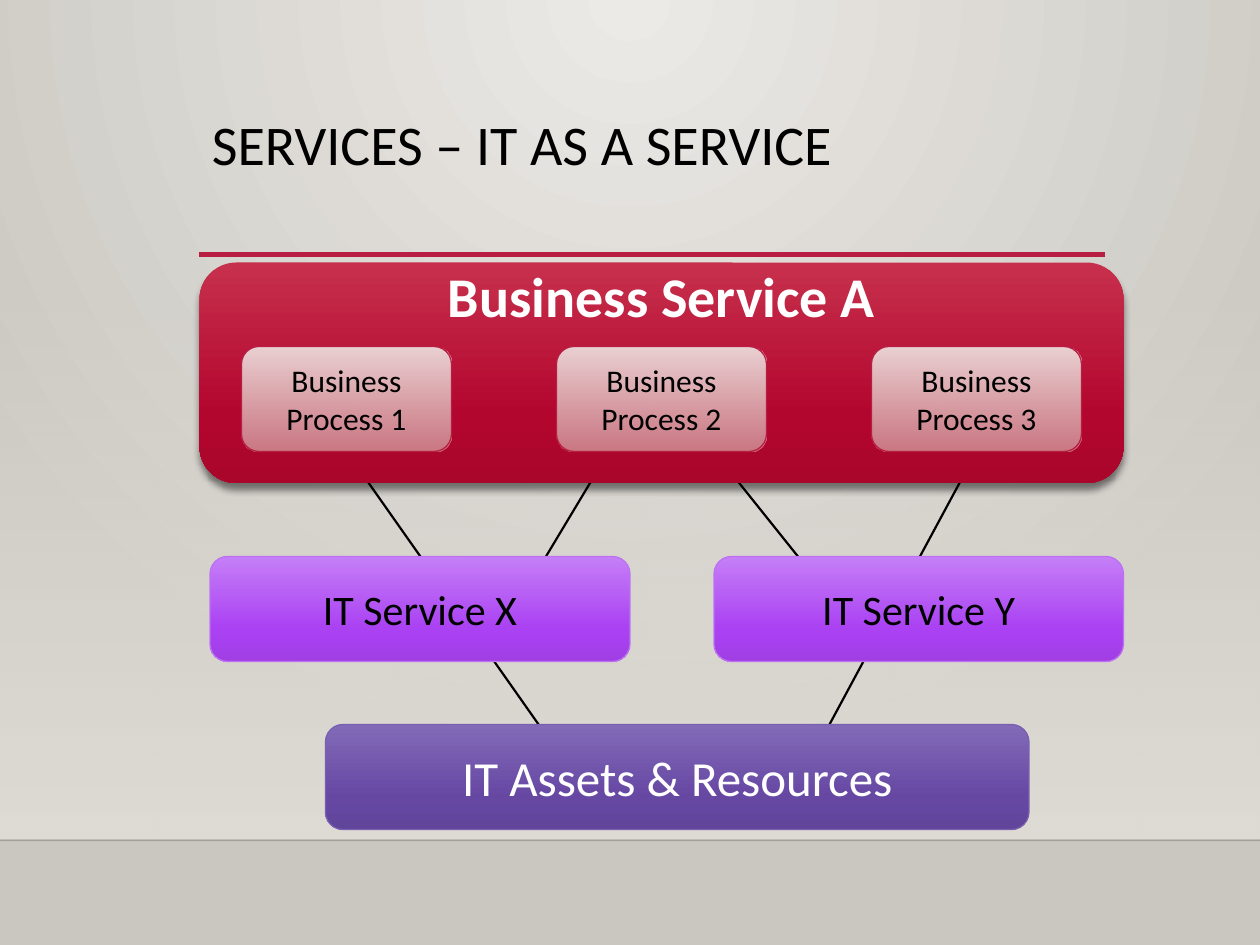
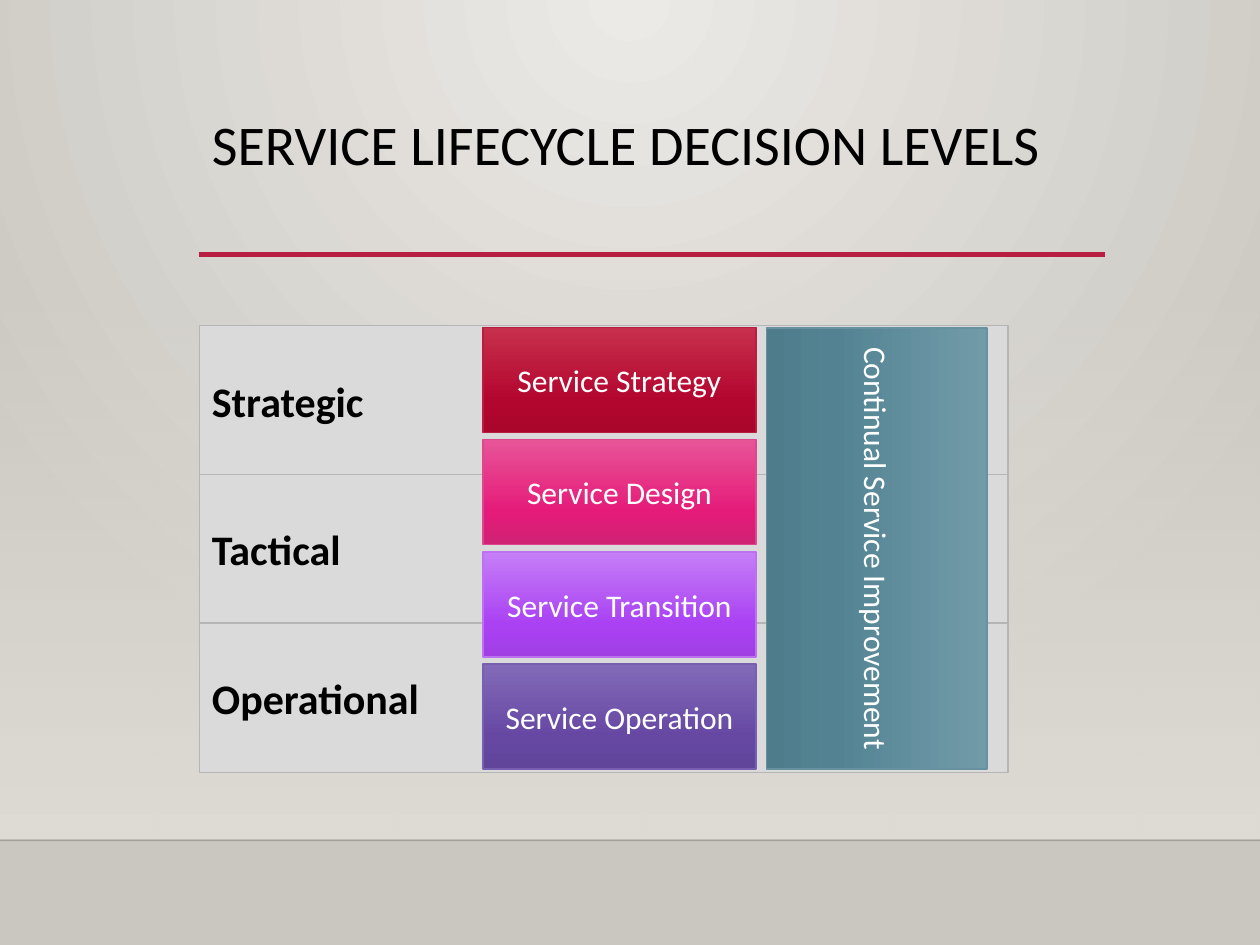
"""Build two slides on IT services and the service lifecycle."""
from lxml.etree import SubElement
from pptx import Presentation
from pptx.dml.color import RGBColor
from pptx.enum.shapes import MSO_CONNECTOR, MSO_SHAPE
from pptx.enum.text import MSO_ANCHOR, PP_ALIGN
from pptx.oxml.ns import qn
from pptx.util import Pt

BLACK = RGBColor(0x00, 0x00, 0x00)
WHITE = RGBColor(0xFF, 0xFF, 0xFF)
RED = RGBColor(0xB7, 0x1E, 0x42)
PINK = RGBColor(0xDE, 0x47, 0x8E)
PURPLE = RGBColor(0xBC, 0x72, 0xF0)
VIOLET = RGBColor(0x79, 0x5F, 0xAF)
TEAL = RGBColor(0x68, 0x92, 0xA0)
GREY = RGBColor(0xDA, 0xDA, 0xDA)
GREY_EDGE = RGBColor(0xB5, 0xB5, 0xB5)
SAND = RGBColor(0xDF, 0xDB, 0xD5)

BACKDROP = [(0, RGBColor(0xEC, 0xEA, 0xE7), 100), (100, RGBColor(0xCA, 0xC7, 0xC1), 100)]
FADE = [(0, SAND, 0), (100, SAND, 100)]
ROSE_FILL = [(0, RGBColor(0xEA, 0xD1, 0xD3), 100), (100, RGBColor(0xCD, 0x82, 0x8A), 92)]


def glossy(top, body, bottom):
    """Return the stops of a three-tone gradient."""
    return [(0, top, 100), (69, body, 100), (100, bottom, 100)]


RED_FILL = glossy(RGBColor(0xC7, 0x30, 0x4C), RGBColor(0xB3, 0x06, 0x2F), RGBColor(0xAA, 0x06, 0x2C))
PINK_FILL = glossy(RGBColor(0xE7, 0x55, 0x97), RGBColor(0xE5, 0x1A, 0x79), RGBColor(0xCF, 0x23, 0x74))
PURPLE_FILL = glossy(RGBColor(0xC5, 0x7F, 0xF7), RGBColor(0xAA, 0x41, 0xF3), RGBColor(0xA1, 0x3F, 0xE5))
VIOLET_FILL = glossy(RGBColor(0x83, 0x6A, 0xB8), RGBColor(0x66, 0x48, 0xA3), RGBColor(0x60, 0x45, 0x9A))
TEAL_FILL = glossy(RGBColor(0x72, 0x9B, 0xA9), RGBColor(0x53, 0x83, 0x93), RGBColor(0x4F, 0x7C, 0x8B))


def add_color(parent, color, alpha):
    """Add an RGB colour with its opacity in percent."""
    clr = SubElement(parent, qn("a:srgbClr"), val=str(color))
    if alpha < 100:
        SubElement(clr, qn("a:alpha"), val=str(alpha * 1000))


def set_gradient(parent, stops, radial=False):
    """Replace the solid fill of parent by a gradient."""
    grad = parent.makeelement(qn("a:gradFill"), {"rotWithShape": "1"})
    parent.replace(parent.find(qn("a:solidFill")), grad)
    gs_lst = SubElement(grad, qn("a:gsLst"))
    for pos, color, alpha in stops:
        add_color(SubElement(gs_lst, qn("a:gs"), pos=str(pos * 1000)), color, alpha)
    if radial:
        shade = SubElement(grad, qn("a:path"), {"path": "circle"})
        SubElement(shade, qn("a:fillToRect"), l="43000", t="0", r="43000", b="100000")
    else:
        SubElement(grad, qn("a:lin"), ang="5400000", scaled="0")


class Deck:
    """Hold the style and the current slide."""

    font = "Calibri"

    def __init__(self):
        """Start an empty presentation."""
        self.prs = Presentation()
        self.prs.slide_width, self.prs.slide_height = Pt(720), Pt(540)

    def slide(self, title):
        """Add a slide with backdrop, rules and title."""
        self.s = self.prs.slides.add_slide(self.prs.slide_layouts[6])
        self.s.background.fill.solid()
        set_gradient(self.s.element.find(".//" + qn("p:bgPr")), BACKDROP, radial=True)
        self.box(0, 158.4, 720, 321.5, FADE)
        self.line(0, 480.2, 720, 480.2, BLACK, 1, alpha=20)
        self.line(114, 145.4, 631.4, 145.4, RED, 2.5)
        tb = self.s.shapes.add_textbox(Pt(114), Pt(63.4), Pt(517.7), Pt(82.8))
        self.label(tb, title, 32, BLACK, align=PP_ALIGN.LEFT, anchor=MSO_ANCHOR.TOP, spacing=0.9)

    def label(self, sp, text, size, color, bold=False, align=PP_ALIGN.CENTER,
              anchor=MSO_ANCHOR.MIDDLE, spacing=None):
        """Put one formatted paragraph in a shape."""
        tf = sp.text_frame
        tf.text, tf.word_wrap, tf.vertical_anchor = text, True, anchor
        p = tf.paragraphs[0]
        p.alignment, p.line_spacing = align, spacing
        f = p.runs[0].font
        f.name, f.size, f.bold, f.color.rgb = self.font, Pt(size), bold, color

    def box(self, x, y, w, h, fill, edge=None, rounded=False):
        """Add a rectangle with a plain or gradient fill."""
        kind = MSO_SHAPE.ROUNDED_RECTANGLE if rounded else MSO_SHAPE.RECTANGLE
        sp = self.s.shapes.add_shape(kind, Pt(x), Pt(y), Pt(w), Pt(h))
        sp.shadow.inherit = False
        sp.fill.solid()
        if isinstance(fill, list):
            set_gradient(sp.element.spPr, fill)
        else:
            sp.fill.fore_color.rgb = fill
        if edge is None:
            sp.line.fill.background()
        else:
            sp.line.color.rgb, sp.line.width = edge, Pt(0.75)
        return sp

    def line(self, x1, y1, x2, y2, color=BLACK, width=1.25, alpha=100):
        """Add a straight line."""
        c = self.s.shapes.add_connector(MSO_CONNECTOR.STRAIGHT, Pt(x1), Pt(y1), Pt(x2), Pt(y2))
        c.line.color.rgb, c.line.width = color, Pt(width)
        if alpha < 100:
            clr = c.element.spPr.find(".//" + qn("a:srgbClr"))
            SubElement(clr, qn("a:alpha"), val=str(alpha * 1000))
        SubElement(c.element.spPr, qn("a:effectLst"))
        return c

    def drop_shadow(self, sp):
        """Give a shape a soft shadow below."""
        effects = sp.element.spPr.find(qn("a:effectLst"))
        shadow = SubElement(effects, qn("a:outerShdw"), blurRad=str(Pt(4)), dist=str(Pt(4)),
                            dir="5400000", rotWithShape="0")
        add_color(shadow, BLACK, 48)


def service_slide(deck):
    """Show business services resting on IT services and assets."""
    deck.slide("SERVICES – IT AS A SERVICE")
    right_link = deck.line(558, 258, 474, 414)
    left_link = deck.line(198, 258, 312, 420)
    deck.line(408, 258, 456, 318)
    deck.line(348, 258, 312, 318)

    business = deck.box(114, 150, 528, 126, RED_FILL, rounded=True)
    deck.drop_shadow(business)
    business.text_frame.margin_top = 0
    deck.label(business, "Business Service A", 32, WHITE, bold=True,
               anchor=MSO_ANCHOR.TOP, spacing=0.83)

    for name, x, y, w, fill, edge, size, color in [
        ("IT Service X", 120, 318, 240, PURPLE_FILL, PURPLE, 24, BLACK),
        ("IT Service Y", 408, 318, 234, PURPLE_FILL, PURPLE, 24, BLACK),
        ("IT Assets & Resources", 186, 414, 402, VIOLET_FILL, VIOLET, 28, WHITE),
    ]:
        deck.label(deck.box(x, y, w, 60, fill, edge, rounded=True), name, size, color)

    processes = []
    for i in range(3):
        sp = deck.box(138 + 180 * i, 198, 120, 60, ROSE_FILL, RED, rounded=True)
        deck.label(sp, f"Business Process {i + 1}", 18, BLACK)
        processes.append(sp)
    left_link.begin_connect(processes[0], 2)
    right_link.begin_connect(processes[2], 2)


def lifecycle_slide(deck):
    """Show lifecycle stages against decision levels."""
    deck.slide("SERVICE LIFECYCLE DECISION LEVELS")
    for i, level in enumerate(["Strategic", "Tactical", "Operational"]):
        sp = deck.box(114, 186 + 85 * i, 462, 85.5, GREY, GREY_EDGE)
        deck.label(sp, level, 24, BLACK, bold=True, align=PP_ALIGN.LEFT)

    stages = [("Strategy", RED_FILL, RED), ("Design", PINK_FILL, PINK),
              ("Transition", PURPLE_FILL, PURPLE), ("Operation", VIOLET_FILL, VIOLET)]
    for i, (stage, fill, edge) in enumerate(stages):
        sp = deck.box(276, 187.2 + 64.1 * i, 156, 60, fill, edge)
        deck.label(sp, f"Service {stage}", 18, WHITE)

    improvement = deck.box(375, 250.4, 252, 126, TEAL_FILL, TEAL, rounded=True)
    improvement.adjustments[0] = 0
    improvement.rotation = 90
    deck.label(improvement, "Continual Service Improvement", 18, WHITE)


def main():
    """Build and save the deck."""
    deck = Deck()
    service_slide(deck)
    lifecycle_slide(deck)
    deck.prs.save("out.pptx")


if __name__ == "__main__":
    main()
